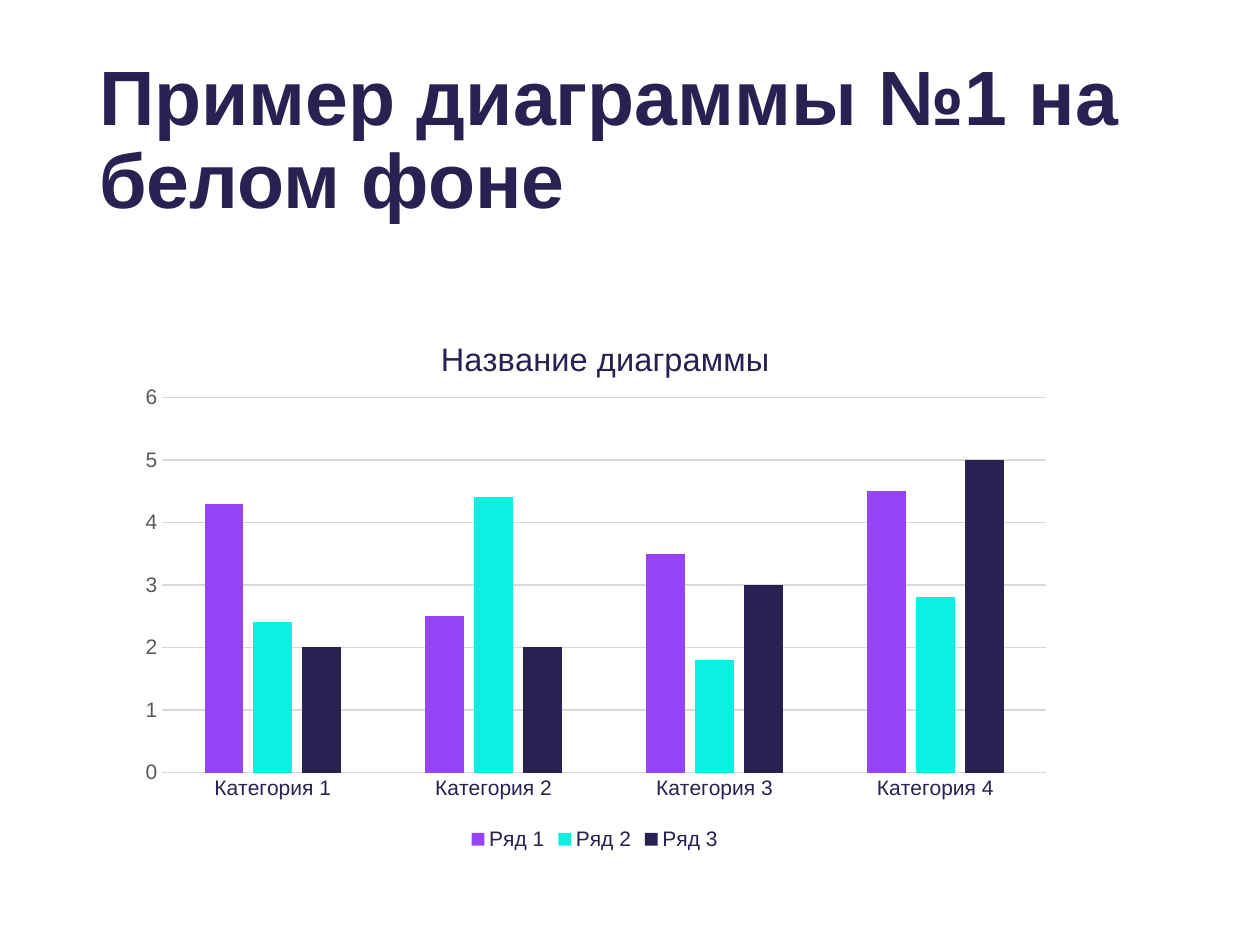
from lxml import etree
from pptx import Presentation
from pptx.chart.data import CategoryChartData
from pptx.dml.color import RGBColor
from pptx.enum.chart import XL_CHART_TYPE, XL_LEGEND_POSITION, XL_TICK_MARK
from pptx.enum.text import MSO_ANCHOR
from pptx.oxml.ns import qn
from pptx.util import Inches, Pt

COLUMNS = XL_CHART_TYPE.COLUMN_CLUSTERED
BOTTOM = XL_LEGEND_POSITION.BOTTOM
NO_TICK = XL_TICK_MARK.NONE
MIDDLE = MSO_ANCHOR.MIDDLE

# Content
TITLE = "Пример диаграммы №1 на\vбелом фоне"
CHART_TITLE = "Название диаграммы"
CATEGORIES = [f"Категория {n}" for n in range(1, 5)]
SERIES = [
    ("Ряд 1", (4.3, 2.5, 3.5, 4.5), "9744F6"),
    ("Ряд 2", (2.4, 4.4, 1.8, 2.8), "0BF0E1"),
    ("Ряд 3", (2, 2, 3, 5), "282252"),
]

THEME = {
    "font": "Arial", "ink": "282252", "muted": "595959", "grid": "D9D9D9",
    "title": 44, "chart_title": 18.6, "label": 12,
}
TITLE_BOX = (0.69, 0.4, 8.62, 1.45)
CHART_BOX = (0.99, 2.41, 7.46, 4.38)
# Fractions of the chart area
PLOT_LAYOUT = {"x": 0.04, "y": 0.17, "w": 0.94, "h": 0.68}
TITLE_LAYOUT = {"x": 0.33, "y": 0.05}


def style(font, size, color, bold=False):
    font.name, font.size, font.bold = THEME["font"], Pt(size), bold
    font.color.rgb = RGBColor.from_string(color)


def style_line(line):
    line.color.rgb = RGBColor.from_string(THEME["grid"])
    line.width = Pt(0.75)


def place(parent, fractions, inner=False):
    """Give a chart part a manual layout."""
    layout = parent.find(qn("c:layout"))
    if layout is None:
        layout = etree.Element(qn("c:layout"))
        text = parent.find(qn("c:tx"))
        parent.insert(0 if text is None else parent.index(text) + 1, layout)
    manual = etree.SubElement(layout, qn("c:manualLayout"))
    settings = [("layoutTarget", "inner")] if inner else []
    settings += [(f"{k}Mode", "edge") for k in "xy"]
    settings += list(fractions.items())
    for tag, value in settings:
        etree.SubElement(manual, qn(f"c:{tag}")).set("val", str(value))


prs = Presentation()
prs.slide_width, prs.slide_height = Inches(10), Inches(7.5)
s = prs.slides.add_slide(prs.slide_layouts[6])

# Heading
tf = s.shapes.add_textbox(*map(Inches, TITLE_BOX)).text_frame
tf.word_wrap = True
tf.vertical_anchor = MIDDLE
tf.text = TITLE
p = tf.paragraphs[0]
p.line_spacing = 0.9
for r in p.runs:
    style(r.font, THEME["title"], THEME["ink"], bold=True)

# Chart
data = CategoryChartData()
data.categories = CATEGORIES
for name, values, _ in SERIES:
    data.add_series(name, values)
chart = s.shapes.add_chart(COLUMNS, *map(Inches, CHART_BOX), data).chart
chart.font.name = THEME["font"]

# Chart title
chart.has_title = True
title = chart.chart_title
title.include_in_layout = False
title.text_frame.text = CHART_TITLE
style(title.text_frame.paragraphs[0].runs[0].font, THEME["chart_title"], THEME["ink"])
place(title._element, TITLE_LAYOUT)

# Columns
plot = chart.plots[0]
plot.vary_by_categories = False
plot.gap_width, plot.overlap = 219, -27
for series, (_, _, color) in zip(plot.series, SERIES):
    series.format.fill.solid()
    series.format.fill.fore_color.rgb = RGBColor.from_string(color)
place(chart._chartSpace.chart.plotArea, PLOT_LAYOUT, inner=True)

# Axes
for axis, color in ((chart.category_axis, THEME["ink"]), (chart.value_axis, THEME["muted"])):
    axis.major_tick_mark = axis.minor_tick_mark = NO_TICK
    style(axis.tick_labels.font, THEME["label"], color)
style_line(chart.category_axis.format.line)
values = chart.value_axis
values.minimum_scale, values.maximum_scale, values.major_unit = 0, 6, 1
values.format.line.fill.background()
style_line(values.major_gridlines.format.line)

# Legend
chart.has_legend = True
chart.legend.position = BOTTOM
chart.legend.include_in_layout = False
style(chart.legend.font, THEME["label"], THEME["ink"])

prs.save("out.pptx")
